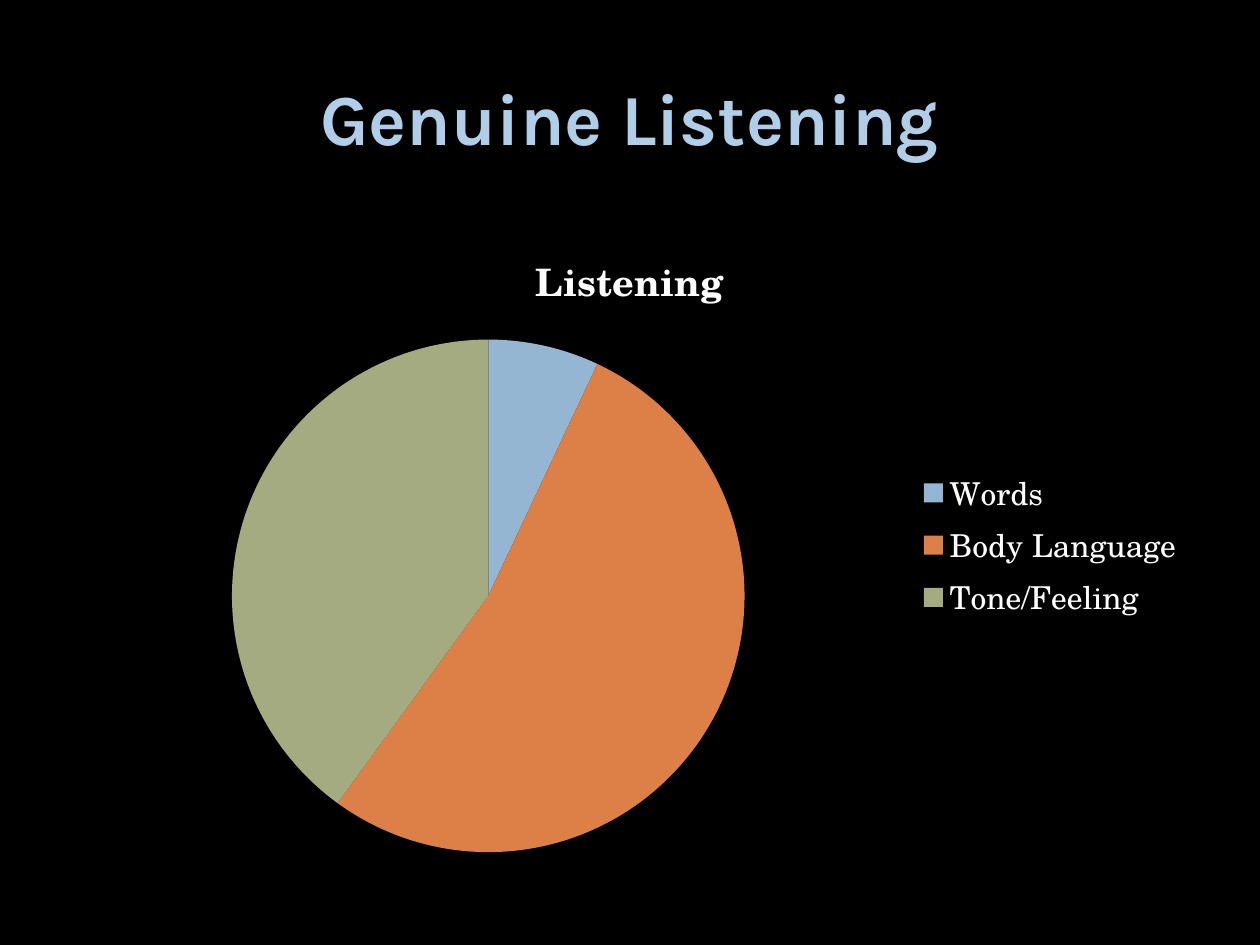
"""Build the Genuine Listening slide with its pie chart."""
from pptx import Presentation
from pptx.chart.data import CategoryChartData
from pptx.dml.color import RGBColor
from pptx.enum.chart import XL_CHART_TYPE, XL_LEGEND_POSITION
from pptx.enum.text import MSO_ANCHOR, PP_ALIGN
from pptx.util import Cm, Pt

PIE = XL_CHART_TYPE.PIE
LEGEND_RIGHT = XL_LEGEND_POSITION.RIGHT
MIDDLE = MSO_ANCHOR.MIDDLE
CENTER = PP_ALIGN.CENTER

BLACK = RGBColor(0x00, 0x00, 0x00)
WHITE = RGBColor(0xFF, 0xFF, 0xFF)
PALE_BLUE = RGBColor(0xB1, 0xCE, 0xE8)
BLUE = RGBColor(0x94, 0xB6, 0xD2)
ORANGE = RGBColor(0xDD, 0x80, 0x47)
GREEN = RGBColor(0xA5, 0xAB, 0x81)

TITLE_FONT = "Karla"
CHART_FONT = "TeX Gyre Schola"
SHARES = [("Words", 7, BLUE), ("Body Language", 53, ORANGE), ("Tone/Feeling", 40, GREEN)]


def format_font(font, name, size, color, bold=False):
    font.name = name
    font.size = Pt(size)
    font.bold = bold
    font.color.rgb = color


def write_text(text_frame, text, *, align=CENTER, **font_format):
    text_frame.text = text
    paragraph = text_frame.paragraphs[0]
    paragraph.alignment = align
    format_font(paragraph.runs[0].font, **font_format)


class SlideBuilder:
    def __init__(self, presentation, background):
        self.slide = presentation.slides.add_slide(presentation.slide_layouts[5])
        fill = self.slide.background.fill
        fill.solid()
        fill.fore_color.rgb = background
        self.left = Cm(1.27)
        self.width = presentation.slide_width - 2 * self.left

    def add_title(self, text, top, height):
        title = self.slide.shapes.title
        title.left, title.top, title.width, title.height = self.left, top, self.width, height
        title.text_frame.vertical_anchor = MIDDLE
        write_text(title.text_frame, text, name=TITLE_FONT, size=41, color=PALE_BLUE, bold=True)

    def add_pie(self, name, shares, top, height):
        labels, values, colors = zip(*shares)
        data = CategoryChartData()
        data.categories = labels
        data.add_series(name, values)
        chart = self.slide.shapes.add_chart(PIE, self.left, top, self.width, height, data).chart
        format_font(chart.font, CHART_FONT, 18, WHITE)
        chart.has_title = True
        write_text(chart.chart_title.text_frame, name,
                   name=CHART_FONT, size=21.6, color=WHITE, bold=True)
        chart.has_legend = True
        chart.legend.position = LEGEND_RIGHT
        chart.legend.include_in_layout = False
        plot = chart.plots[0]
        plot.vary_by_categories = True
        for index, color in enumerate(colors):
            fill = plot.series[0].points[index].format.fill
            fill.solid()
            fill.fore_color.rgb = color


def main():
    presentation = Presentation()
    presentation.slide_width, presentation.slide_height = Cm(25.4), Cm(19.05)
    builder = SlideBuilder(presentation, BLACK)
    builder.add_title("Genuine Listening", top=Cm(0.76), height=Cm(3.18))
    builder.add_pie("Listening", SHARES, top=Cm(4.45), height=Cm(13.08))
    presentation.save("out.pptx")


if __name__ == "__main__":
    main()
